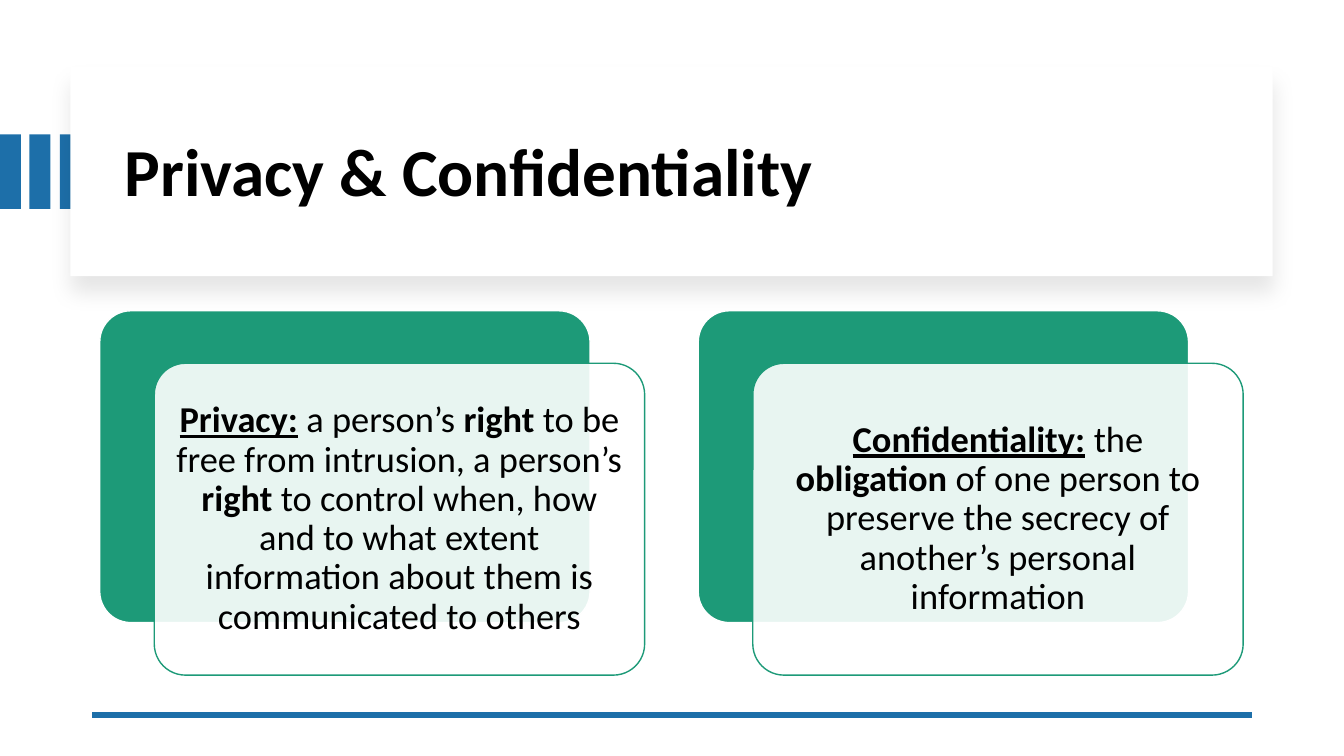
"""Build the Privacy & Confidentiality definitions slide."""
from pptx import Presentation, util as u
from pptx.dml.color import RGBColor
from pptx.enum import shapes, text
from pptx.oxml import parse_xml
from pptx.oxml.ns import nsdecls, qn
from lxml import etree

PX = 9525
BLUE = RGBColor(0x1D, 0x6F, 0xA9)
GREEN = RGBColor(0x1D, 0x9A, 0x78)
WHITE = RGBColor(0xFF, 0xFF, 0xFF)
BLACK = RGBColor(0, 0, 0)

RECT = shapes.MSO_SHAPE.RECTANGLE
ROUNDED = shapes.MSO_SHAPE.ROUNDED_RECTANGLE

prs = Presentation()
prs.slide_width, prs.slide_height = 1280 * PX, 720 * PX
slide = prs.slides.add_slide(prs.slide_layouts[5])


def add_box(kind, left, top, width, height, fill, line=None):
    box = slide.shapes.add_shape(kind, left * PX, top * PX, width * PX, height * PX)
    box.shadow.inherit = False
    box.fill.solid()
    box.fill.fore_color.rgb = fill
    if line is None:
        box.line.fill.background()
    else:
        box.line.color.rgb = line
        box.line.width = u.Pt(1)
    if kind == ROUNDED:
        box.adjustments[0] = 0.1
    return box


def write(paragraph, words, size, bold=False, underline=False):
    run = paragraph.add_run()
    run.text = words
    run.font.name = "Calibri"
    run.font.size = u.Pt(size)
    run.font.bold = bold
    run.font.underline = underline
    run.font.color.rgb = BLACK


for stripe in range(3):
    add_box(RECT, round(stripe * 28.3), 128, 20, 71, BLUE)

banner = add_box(RECT, 67, 64, 1145, 199, WHITE)
banner_effects = banner.element.spPr.find(qn("a:effectLst"))
banner_effects.append(parse_xml(
    f'<a:outerShdw {nsdecls("a")} blurRad="{u.Pt(15)}" dist="{u.Pt(11)}" dir="5400000" '
    'algn="t" rotWithShape="0"><a:srgbClr val="000000"><a:alpha val="10000"/></a:srgbClr>'
    '</a:outerShdw>'))

title = slide.shapes.title
slide.shapes.element.append(title.element)
title.left, title.top, title.width, title.height = 109 * PX, 85 * PX, 1068 * PX, 163 * PX
title.text_frame.auto_size = text.MSO_AUTO_SIZE.NONE
title.text_frame.vertical_anchor = text.MSO_ANCHOR.MIDDLE
heading = title.text_frame.paragraphs[0]
heading.alignment = text.PP_ALIGN.LEFT
heading.line_spacing = 0.9
write(heading, "Privacy & Confidentiality", 48, bold=True)

footer_rule = slide.shapes.add_connector(
    shapes.MSO_CONNECTOR.STRAIGHT, 1192 * PX, 681 * PX, 88 * PX, 681 * PX)
footer_rule.line.color.rgb = BLUE
footer_rule.line.width = u.Pt(4.5)
etree.SubElement(footer_rule.element.spPr, qn("a:effectLst"))

definitions = [
    ("Privacy:", [
        (" a person’s ", False), ("right", True),
        (" to be free from intrusion, a person’s ", False), ("right", True),
        (" to control when, how and to what extent information about them is "
         "communicated to others", False)]),
    ("Confidentiality:", [
        (" the ", False), ("obligation", True),
        (" of one person to preserve the secrecy of another’s personal information", False)]),
]

for column, (term, meaning) in enumerate(definitions):
    left = 95 + column * 570
    add_box(ROUNDED, left, 296, 467, 297, GREEN, WHITE)
    card = add_box(ROUNDED, left + 52, 346, 467, 297, WHITE, GREEN)
    card_color = card.element.spPr.find(qn("a:solidFill"))[0]
    etree.SubElement(card_color, qn("a:alpha"), val="90000")

    definition = slide.shapes.add_textbox(
        (left + 61) * PX, 355 * PX, 449 * PX, 279 * PX).text_frame
    definition.word_wrap = True
    definition.vertical_anchor = text.MSO_ANCHOR.MIDDLE
    definition.margin_left = definition.margin_right = 10 * PX
    definition.margin_top = definition.margin_bottom = 10 * PX
    sentence = definition.paragraphs[0]
    sentence.alignment = text.PP_ALIGN.CENTER
    sentence.line_spacing = 0.9
    write(sentence, term, 26, bold=True, underline=True)
    for words, bold in meaning:
        write(sentence, words, 26, bold=bold)

prs.save("out.pptx")
